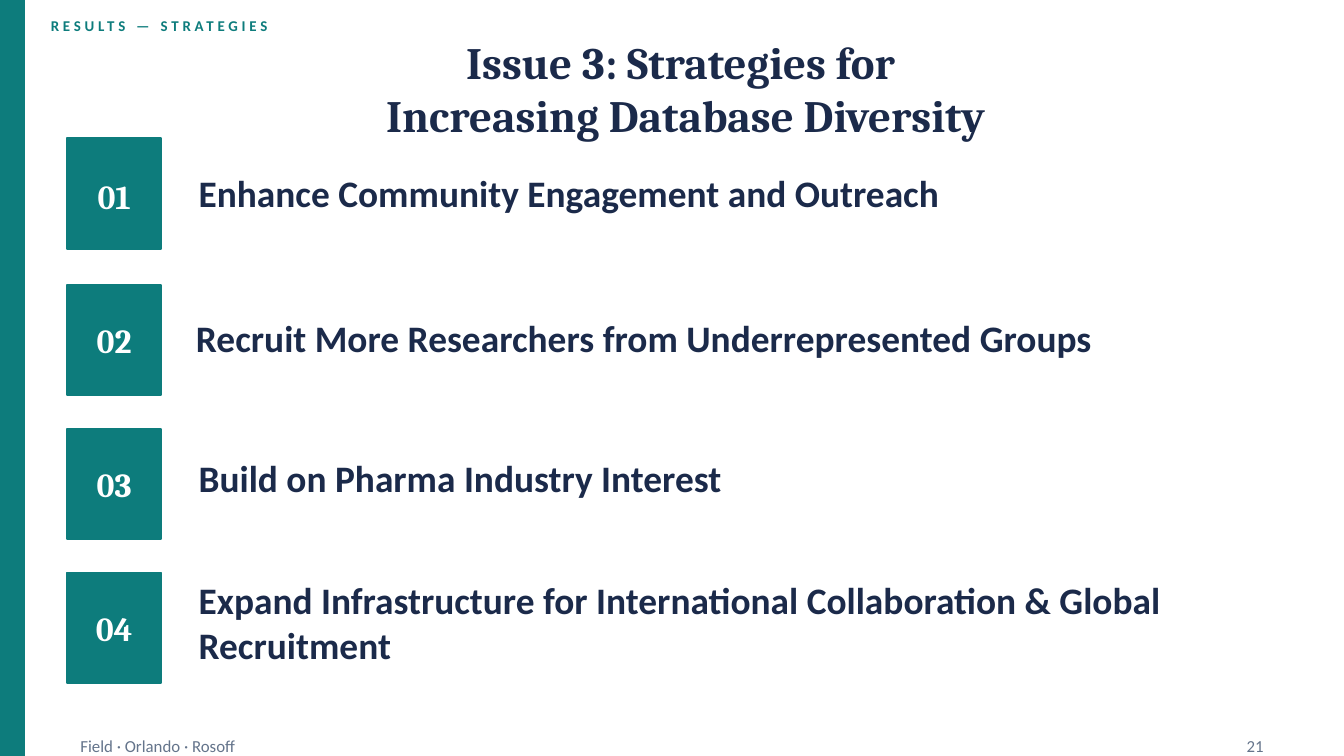
from pptx import Presentation
from pptx.dml.color import RGBColor as RGB
from pptx.enum.shapes import MSO_SHAPE as SHAPE
from pptx.enum.text import MSO_ANCHOR as ANCHOR, PP_ALIGN as ALIGN
from pptx.util import Inches, Pt

# Content
SECTION = "RESULTS — STRATEGIES"
TITLE = ["Issue 3: Strategies for ", "Increasing Database Diversity"]
# label, left edge, drop below the row's top, label height, lift of the square
STRATEGIES = [
    ("Enhance Community Engagement and Outreach", 1.38, 0.21, 0.35, 0.02),
    ("Recruit More Researchers from Underrepresented Groups", 1.36, 0.22, 0.35, 0),
    ("Build on Pharma Industry Interest", 1.38, 0.19, 0.35, 0),
    ("Expand Infrastructure for International Collaboration & Global Recruitment",
     1.38, 0.08, 0.58, 0),
]
FOOTER, PAGE = "Field · Orlando · Rosoff", "21"

# Theme: colours, and text styles as (font, size, bold, colour)
TEAL, NAVY, GREY, WHITE = (RGB.from_string(c) for c in
                           ("0D7C7C", "1B2A4A", "64748B", "FFFFFF"))
THEME = {
    "section": ("Calibri", 8, True, TEAL),
    "title": ("Cambria", 24, True, NAVY),
    "number": ("Cambria", 18, True, WHITE),
    "label": ("Calibri", 20, True, NAVY),
    "footer": ("Calibri", 9, False, GREY),
}

# Grid
WIDTH = 10
HEIGHT = WIDTH * 9 / 16
MARGIN, SQUARE_W, SQUARE_H = 0.5, 0.7, 0.82
ROW_TOP, ROW_PITCH = 1.05, 1.07
NUMBER_H = 0.5
FOOTER_TOP, FOOTER_H = 5.47, 0.16

prs = Presentation()
prs.slide_width, prs.slide_height = Inches(WIDTH), Inches(HEIGHT)
s = prs.slides.add_slide(prs.slide_layouts[6])


def add_block(x, y, w, h):
    sp = s.shapes.add_shape(SHAPE.RECTANGLE, *map(Inches, (x, y, w, h)))
    sp.shadow.inherit = False
    sp.fill.solid()
    sp.fill.fore_color.rgb = TEAL
    sp.line.color.rgb = TEAL
    sp.line.width = Pt(1)


def add_text(lines, style, x, y, w, h, align=ALIGN.LEFT, spacing=None):
    tf = s.shapes.add_textbox(*map(Inches, (x, y, w, h))).text_frame
    tf.word_wrap = True
    tf.vertical_anchor = ANCHOR.MIDDLE
    for i, line in enumerate(lines):
        p = tf.add_paragraph() if i else tf.paragraphs[0]
        p.alignment = align
        r = p.add_run()
        r.text = line
        p.font.name, size, p.font.bold, p.font.color.rgb = THEME[style]
        p.font.size = Pt(size)
        if spacing:
            r.font._element.set("spc", str(spacing * 100))


# Side bar and headings
add_block(0, 0, 0.18, HEIGHT)
add_text([SECTION], "section", 0.28, 0.08, 4.5, 0.22, spacing=2)
add_text(TITLE, "title", MARGIN, 0.28, 9.2, 0.75, ALIGN.CENTER)

# Numbered strategies
for i, (label, left, drop, height, lift) in enumerate(STRATEGIES):
    top = ROW_TOP + i * ROW_PITCH
    add_block(MARGIN, top - lift, SQUARE_W, SQUARE_H)
    add_text([f"{i + 1:02}"], "number", MARGIN, top + (SQUARE_H - NUMBER_H) / 2,
             SQUARE_W, NUMBER_H, ALIGN.CENTER)
    add_text([label], "label", left, top + drop, 8.2, height)

# Footer
add_text([FOOTER], "footer", MARGIN, FOOTER_TOP, WIDTH - 2 * MARGIN, FOOTER_H)
add_text([PAGE], "footer", WIDTH - 2 * MARGIN, FOOTER_TOP, MARGIN, FOOTER_H, ALIGN.RIGHT)

prs.save("out.pptx")
